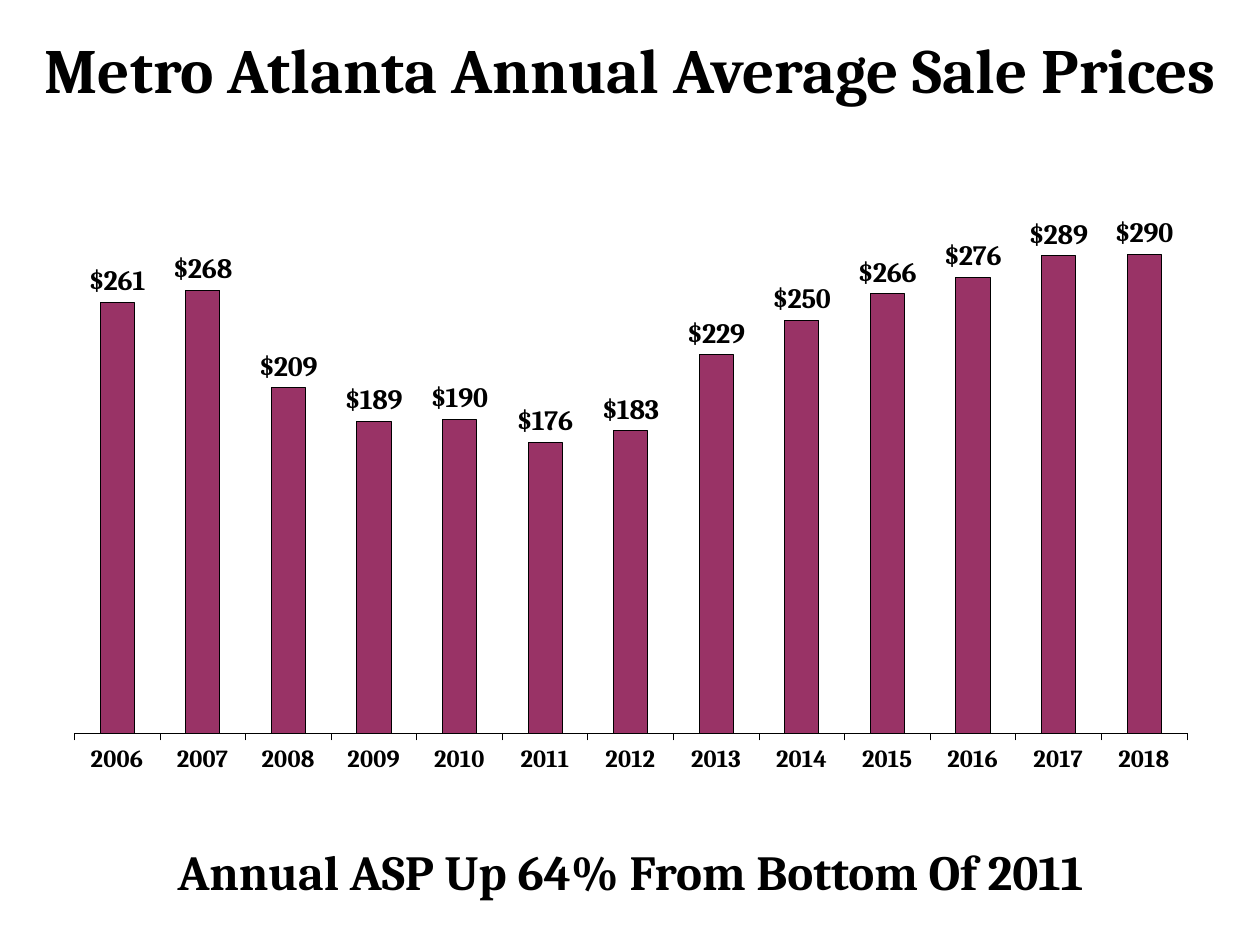
from lxml import etree
from pptx import Presentation
from pptx.chart.data import CategoryChartData
from pptx.dml.color import RGBColor
from pptx.enum.chart import XL_CHART_TYPE as ChartType
from pptx.enum.chart import XL_LABEL_POSITION as LabelPosition
from pptx.enum.chart import XL_TICK_LABEL_POSITION as TickLabelPosition
from pptx.enum.chart import XL_TICK_MARK as TickMark
from pptx.enum.text import MSO_ANCHOR, MSO_AUTO_SIZE, PP_ALIGN
from pptx.oxml.ns import qn
from pptx.util import Emu, Pt

PX_PER_INCH = 126
BLACK, PLUM = "000000", "993366"
PRICES = [261, 268, 209, 189, 190, 176, 183, 229, 250, 266, 276, 289, 290]
YEARS = [str(2006 + i) for i in range(len(PRICES))]


def px(n):
    return Emu(round(n * 914400 / PX_PER_INCH))


def style_font(font, size, color=BLACK):
    font.name = "Cambria"
    font.size = Pt(size)
    font.bold = True
    font.color.rgb = RGBColor.from_string(color)


presentation = Presentation()
presentation.slide_width, presentation.slide_height = px(1260), px(945)
slide = presentation.slides.add_slide(presentation.slide_layouts[5])

# Title and caption
title = slide.shapes.title
title.left, title.top, title.width, title.height = px(0), px(42), px(1260), px(53)
caption = slide.shapes.add_textbox(px(32), px(819), px(1197), px(73))
for shape, text, size, anchor in (
    (title, "Metro Atlanta Annual Average Sale Prices", 36, MSO_ANCHOR.MIDDLE),
    (caption, "Annual ASP Up 64% From Bottom Of 2011", 28, MSO_ANCHOR.TOP),
):
    frame = shape.text_frame
    frame.text = text
    frame.word_wrap = True
    frame.auto_size = MSO_AUTO_SIZE.NONE
    frame.vertical_anchor = anchor
    paragraph = frame.paragraphs[0]
    paragraph.alignment = PP_ALIGN.CENTER
    style_font(paragraph.font, size)
caption.text_frame.margin_top = px(29)
caption.text_frame.paragraphs[0].line_spacing = 0.9

# Column chart, in thousands of dollars
data = CategoryChartData()
data.categories = YEARS
data.add_series("Series 1", PRICES)
chart = slide.shapes.add_chart(
    ChartType.COLUMN_CLUSTERED, px(63), px(89), px(1124), px(732), data).chart
chart.has_title = False
chart.has_legend = False
style_font(chart.font, 14)

value_axis = chart.value_axis
value_axis.visible = False
value_axis.has_major_gridlines = False
value_axis.minimum_scale, value_axis.maximum_scale = 0, 350

category_axis = chart.category_axis
category_axis.major_tick_mark = TickMark.OUTSIDE
category_axis.tick_label_position = TickLabelPosition.LOW
style_font(category_axis.tick_labels.font, 14)

plot = chart.plots[0]
plot.gap_width = 150
plot.vary_by_categories = False
series = plot.series[0]
series.format.fill.solid()
series.format.fill.fore_color.rgb = RGBColor.from_string(PLUM)
for line in (category_axis.format.line, series.format.line):
    line.color.rgb = RGBColor.from_string(BLACK)
    line.width = Pt(0.25)

labels = series.data_labels
labels.show_value = True
labels.number_format = "\\$#,##0"
labels.number_format_is_linked = False
labels.position = LabelPosition.OUTSIDE_END
style_font(labels.font, 16)

# Fixed inner plot area, as fractions of the chart
plot_area = plot_area = value_axis._element.getparent()
for old_layout in plot_area.findall(qn("c:layout")):
    plot_area.remove(old_layout)
layout = etree.Element(qn("c:layout"))
manual = etree.SubElement(layout, qn("c:manualLayout"))
for tag, value in (("layoutTarget", "inner"), ("xMode", "edge"), ("yMode", "edge"),
                   ("x", 0.01), ("y", 0.09), ("w", 0.99), ("h", 0.79)):
    etree.SubElement(manual, qn("c:" + tag)).set("val", str(value))
plot_area.insert(0, layout)

presentation.save("out.pptx")
